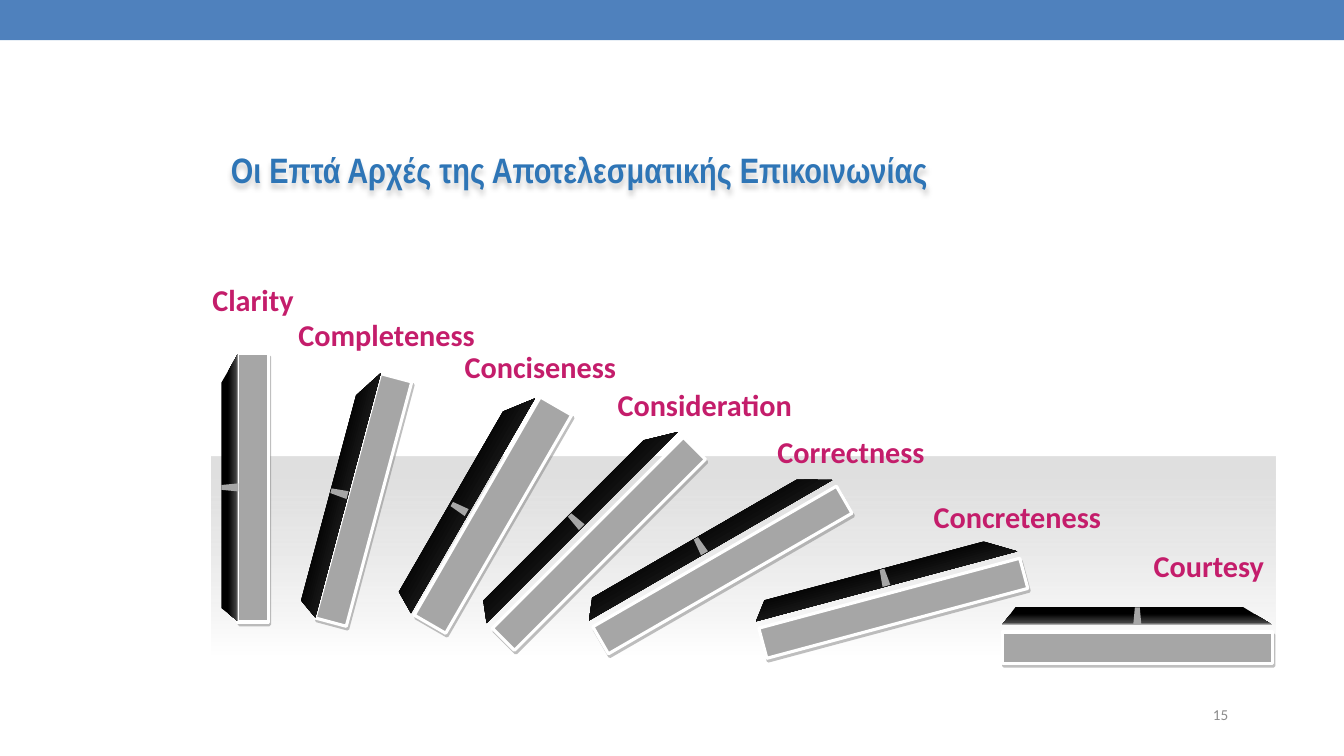
from math import cos, radians, sin

from lxml import etree
from pptx import Presentation
from pptx import util as u
from pptx.dml.color import RGBColor
from pptx.enum import shapes, text
from pptx.oxml.ns import qn

# Content
TITLE = "Οι Επτά Αρχές της Αποτελεσματικής Επικοινωνίας"
PAGE_NUMBER = "15"

# Label, its box (left, top, width), rotation, front (left, top, width, height),
# top face (left, top, width, height), shift of the notch along the face
DOMINOES = [
    ("Clarity", (1.91, 2.74, 1.2), 270, (1.18, 4.69, 2.66, 0.3), (0.95, 4.75, 2.66, 0.17), 0),
    ("Completeness", (2.87, 3.09, 1.93), 285, (2.35, 4.8, 2.51, 0.32), (2.11, 4.8, 2.51, 0.18), 0),
    ("Conciseness", (4.58, 3.41, 1.56), 300, (3.64, 4.93, 2.5, 0.36), (3.37, 4.86, 2.46, 0.21), -0.09),
    ("Consideration", (6.11, 3.78, 1.76), 315, (4.6, 5.24, 2.68, 0.31), (4.37, 5.08, 2.68, 0.18), 0),
    ("Correctness", (7.68, 4.25, 1.52), 330, (5.77, 5.5, 2.79, 0.31), (5.61, 5.29, 2.79, 0.18), -0.07),
    ("Concreteness", (9.17, 4.89, 1.84), 345, (7.52, 5.88, 2.68, 0.31), (7.43, 5.64, 2.68, 0.18), 0),
    ("Courtesy", (11.39, 5.38, 1.2), 0, (9.94, 6.27, 2.68, 0.31), (9.94, 6.02, 2.68, 0.18), 0),
]

# Outlines as fractions of width and height
FACE_OUTLINE = [(0, 1), (0.05, 0), (0.89, 0), (1, 1)]
NOTCH_OUTLINE = [(0.2, 0), (0.8, 0), (1, 1), (0, 1)]
NOTCH_SIZE = (0.08, 0.17)

# Gradient stops: position, colour, opacity in percent
FACE_STOPS = [(39, "000000", 100), (87, "404040", 100), (100, "C0C0C0", 100)]
BAND_STOPS = [(8, "D4D4D4", 73), (100, "FFFFFF", 100)]
GREY, WHITE, PINK, BLUE = "A6A6A6", "FFFFFF", "C41D6B", "2E75B6"


def rgb(value):
    return RGBColor.from_string(value)


def add_color(parent, value, opacity):
    color = etree.SubElement(parent, qn("a:srgbClr"), val=value)
    if opacity < 100:
        etree.SubElement(color, qn("a:alpha"), val=str(opacity * 1000))


def paint(shape, fill=None, stops=None, line=None):
    shape.shadow.inherit = False
    if stops:
        shape.fill.gradient()
        shape.fill.gradient_angle = 270
        stop_list = shape._element.spPr.find(".//" + qn("a:gsLst"))
        for stop in list(stop_list):
            stop_list.remove(stop)
        for position, value, opacity in stops:
            stop = etree.SubElement(stop_list, qn("a:gs"), pos=str(position * 1000))
            add_color(stop, value, opacity)
    else:
        shape.fill.solid()
        shape.fill.fore_color.rgb = rgb(fill)
    if line:
        shape.line.color.rgb = rgb(line)
        shape.line.width = u.Pt(2.25)
    else:
        shape.line.fill.background()


def add_shadow(shape, value, opacity, blur, distance, angle):
    shape.shadow.inherit = False
    effects = shape._element.spPr.find(qn("a:effectLst"))
    shadow = etree.SubElement(
        effects, qn("a:outerShdw"), blurRad=str(u.Pt(blur)), dist=str(u.Pt(distance)),
        dir=str(angle * 60000), algn="ctr", rotWithShape="0")
    add_color(shadow, value, opacity)


def add_rectangle(page, box, rotation=0, **look):
    shape = page.shapes.add_shape(shapes.MSO_SHAPE.RECTANGLE, *map(u.Inches, box))
    shape.rotation = rotation
    paint(shape, **look)
    return shape


def add_outline(page, outline, box, rotation, **look):
    left, top, width, height = box
    points = [(u.Inches(left + x * width), u.Inches(top + y * height)) for x, y in outline]
    builder = page.shapes.build_freeform(*points[0])
    builder.add_line_segments(points[1:], close=True)
    shape = builder.convert_to_shape()
    shape.rotation = rotation
    paint(shape, **look)


def write(shape, words, size, font, color, bold=False, align=text.PP_ALIGN.LEFT,
          anchor=text.MSO_ANCHOR.TOP, insets=(0.1, 0.05)):
    frame = shape.text_frame
    frame.word_wrap = True
    frame.auto_size = text.MSO_AUTO_SIZE.NONE
    frame.vertical_anchor = anchor
    frame.margin_left = frame.margin_right = u.Inches(insets[0])
    frame.margin_top = frame.margin_bottom = u.Inches(insets[1])
    para = frame.paragraphs[0]
    para.alignment = align
    span = para.add_run()
    span.text = words
    span.font.size = u.Pt(size)
    span.font.name = font
    span.font.bold = bold
    span.font.color.rgb = rgb(color)
    return para


def add_domino(page, rotation, front, face, shift):
    block = add_rectangle(page, front, rotation, fill=GREY, line=WHITE)
    add_shadow(block, "808080", 50, 0, 2.2, 63)
    add_outline(page, FACE_OUTLINE, face, rotation, stops=FACE_STOPS)
    # The notch sits at the middle of the top face, moved along its slope
    left, top, width, height = face
    notch_width, notch_height = NOTCH_SIZE
    middle_x = left + width / 2 + shift * cos(radians(rotation))
    middle_y = top + height / 2 + shift * sin(radians(rotation))
    notch = (middle_x - notch_width / 2, middle_y - notch_height / 2, notch_width, notch_height)
    add_outline(page, NOTCH_OUTLINE, notch, rotation, fill=GREY)


def main():
    deck = Presentation()
    deck.slide_width, deck.slide_height = u.Inches(13.33), u.Inches(7.5)
    page = deck.slides.add_slide(deck.slide_layouts[5])

    # Title
    title = page.shapes.title
    title.left, title.top, title.width, title.height = map(u.Inches, (1.93, 1.2, 10.36, 0.66))
    para = write(title, TITLE, 25.2, "Arial Narrow", BLUE, bold=True, insets=(0.12, 0.06))
    para.line_spacing = 1.5
    para.space_before = u.Pt(4.5)
    para._p.get_or_add_pPr().set("marL", str(u.Inches(0.24)))
    add_shadow(title, "000000", 20, 4, 3, 90)

    # Header bar, floor and page number
    add_rectangle(page, (0, 0, 13.33, 0.4), fill="4F81BD")
    add_rectangle(page, (2.1, 4.53, 10.55, 1.97), stops=BAND_STOPS)
    number = page.shapes.add_textbox(*map(u.Inches, (11.43, 6.89, 0.85, 0.4)))
    write(number, PAGE_NUMBER, 10.8, "Calibri", "8C8C8C",
          align=text.PP_ALIGN.RIGHT, anchor=text.MSO_ANCHOR.MIDDLE)

    # Falling dominoes, then their labels on top
    for _, _, rotation, front, face, shift in DOMINOES:
        add_domino(page, rotation, front, face, shift)
    for words, place, *_ in DOMINOES:
        label = page.shapes.add_textbox(*map(u.Inches, (*place, 0.69)))
        write(label, words, 21.6, "Calibri", PINK, bold=True,
              align=text.PP_ALIGN.CENTER, insets=(0, 0.05))

    deck.save("out.pptx")


if __name__ == "__main__":
    main()
